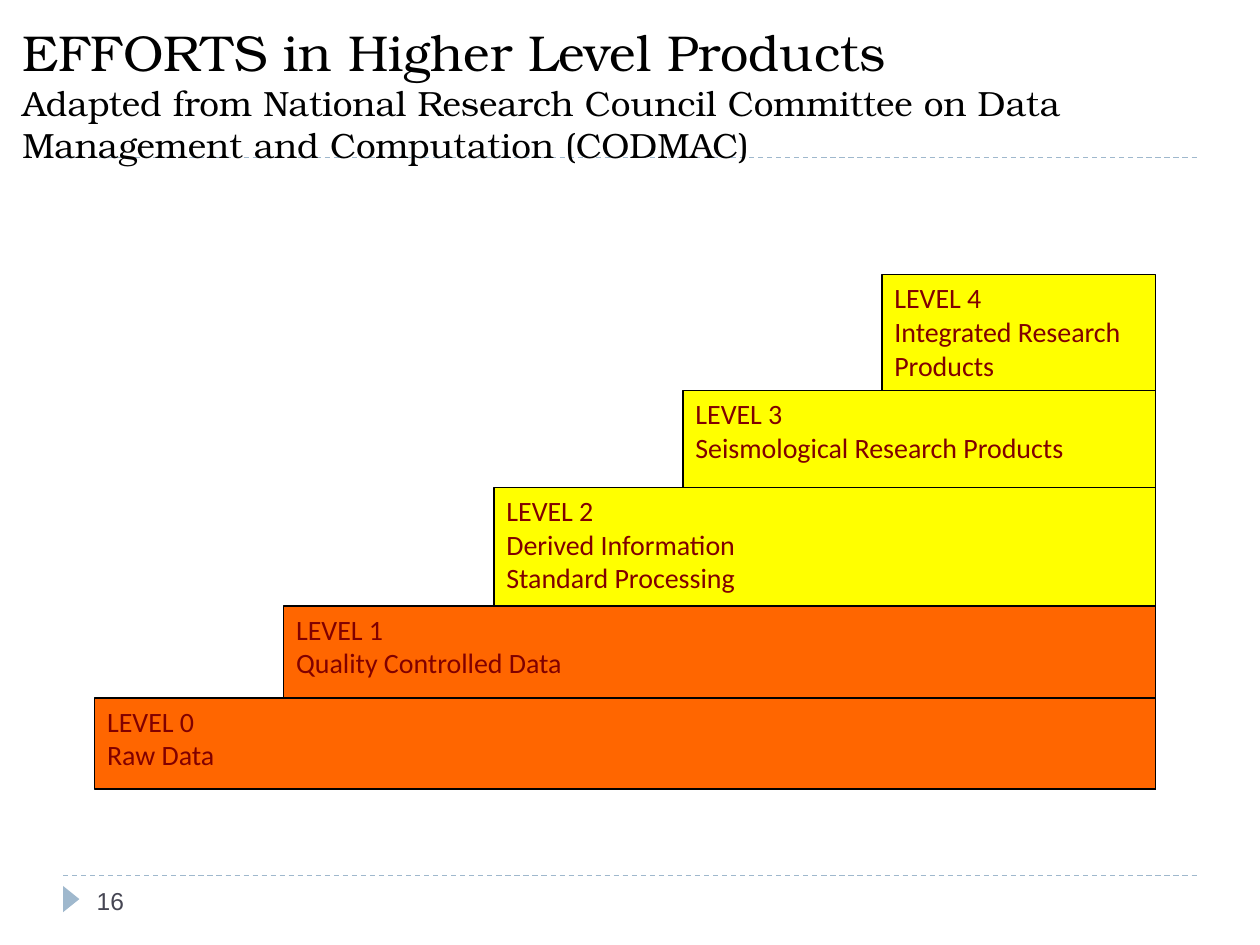
"""Build the slide of data product levels as a staircase of boxes."""
from lxml import etree
from pptx import Presentation
from pptx.dml.color import RGBColor
from pptx.enum import dml, shapes, text
from pptx.oxml import ns
from pptx.util import Cm, Pt

BLACK = RGBColor(0x00, 0x00, 0x00)
YELLOW = RGBColor(0xFF, 0xFF, 0x00)
ORANGE = RGBColor(0xFF, 0x66, 0x00)
MAROON = RGBColor(0x80, 0x00, 0x00)
SLATE = RGBColor(0x46, 0x46, 0x53)
PALE_BLUE = RGBColor(0x9F, 0xB8, 0xCD)

TITLE = "EFFORTS in Higher Level Products"
SUBTITLE = ("Adapted from National Research Council Committee on Data "
            "Management and Computation (CODMAC)")
PAGE_NUMBER = "16"
LEVELS = [
    (17.78, 5.54, YELLOW, ["LEVEL 4", "Integrated Research Products"]),
    (13.77, 7.87, YELLOW, ["LEVEL 3", "Seismological Research Products"]),
    (9.96, 9.83, YELLOW, ["LEVEL 2", "Derived Information", "Standard Processing"]),
    (5.72, 12.22, ORANGE, ["LEVEL 1", "Quality Controlled Data"]),
    (1.91, 14.07, ORANGE, ["LEVEL 0", "Raw Data"]),
]
STAIR_RIGHT, STAIR_BOTTOM = 23.29, 15.91
RULE_LEFT, RULE_RIGHT = 1.27, 24.13
RULE_HEIGHTS = [17.65, 3.18]


def style(span, font, size, color):
    span.font.name = font
    span.font.size = Pt(size)
    span.font.color.rgb = color


def add_rule(page, y):
    rule = page.shapes.add_connector(
        shapes.MSO_CONNECTOR.STRAIGHT, Cm(RULE_LEFT), Cm(y), Cm(RULE_RIGHT), Cm(y))
    rule.line.color.rgb = PALE_BLUE
    rule.line.width = Pt(0.75)
    rule.line.dash_style = dml.MSO_LINE.DASH
    etree.SubElement(rule._element.spPr, ns.qn("a:effectLst"))


def add_marker(page):
    marker = page.shapes.add_shape(
        shapes.MSO_SHAPE.ISOSCELES_TRIANGLE, Cm(1.17), Cm(17.96), Cm(0.53), Cm(0.33))
    marker.rotation = 90
    marker.shadow.inherit = False
    marker.fill.solid()
    marker.fill.fore_color.rgb = PALE_BLUE
    marker.line.fill.background()


def add_level(page, left, top, color, lines):
    box = page.shapes.add_shape(
        shapes.MSO_SHAPE.RECTANGLE, Cm(left), Cm(top),
        Cm(STAIR_RIGHT - left), Cm(STAIR_BOTTOM - top))
    box.shadow.inherit = False
    box.fill.solid()
    box.fill.fore_color.rgb = color
    box.line.color.rgb = BLACK
    box.line.width = Pt(0.75)
    frame = box.text_frame
    frame.word_wrap = True
    frame.vertical_anchor = text.MSO_ANCHOR.TOP
    frame.text = "\n".join(lines)
    for para in frame.paragraphs:
        para.alignment = text.PP_ALIGN.LEFT
        style(para.runs[0], "Calibri", 16, MAROON)


def add_text(page, left, top, width, height, wording, anchor):
    frame = page.shapes.add_textbox(Cm(left), Cm(top), Cm(width), Cm(height)).text_frame
    frame.word_wrap = True
    frame.vertical_anchor = anchor
    frame.text = wording
    return frame.paragraphs[0].runs


def main():
    deck = Presentation()
    deck.slide_width, deck.slide_height = Cm(25.4), Cm(19.05)
    page = deck.slides.add_slide(deck.slide_layouts[6])
    for y in RULE_HEIGHTS:
        add_rule(page, y)
    add_marker(page)
    for level in LEVELS:
        add_level(page, *level)
    heading, source = add_text(
        page, 0.2, 0.3, 22.86, 1.78, f"{TITLE}\v{SUBTITLE}", text.MSO_ANCHOR.TOP)
    style(heading, "TeX Gyre Bonum", 28.8, BLACK)
    style(source, "TeX Gyre Bonum", 20, BLACK)
    number, = add_text(
        page, 1.7, 17.65, 5.51, 1.02, PAGE_NUMBER, text.MSO_ANCHOR.MIDDLE)
    style(number, "Arial", 14, SLATE)
    deck.save("out.pptx")


if __name__ == "__main__":
    main()
